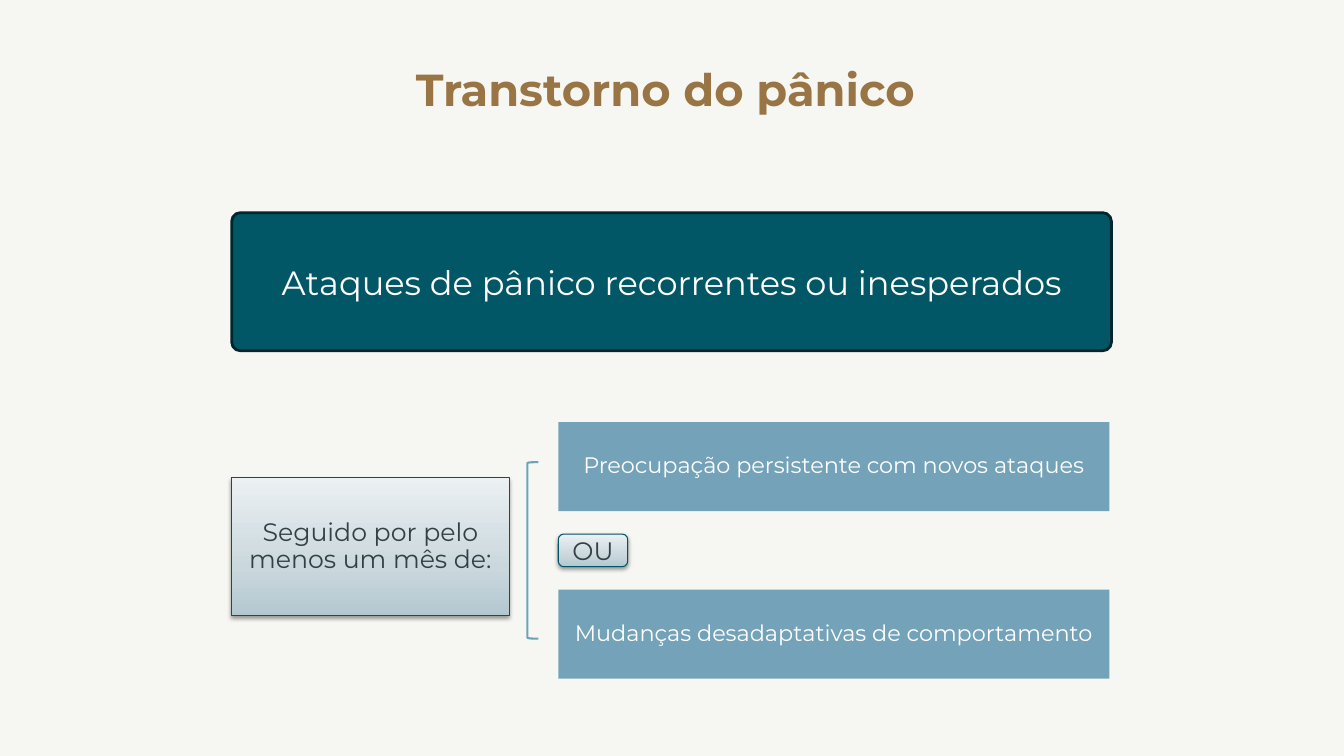
from lxml import etree
from pptx import Presentation
from pptx import util as u
from pptx.dml.color import RGBColor
from pptx.enum import shapes, text
from pptx.oxml import ns

Cm, Pt = u.Cm, u.Pt
SHAPE = shapes.MSO_SHAPE
FONT = "Montserrat"
COLORS = {
    "background": "F6F7F2",
    "title": "997545",
    "banner": "025766",
    "banner_line": "01262D",
    "option": "4988A7",
    "bracket": "6AA4B9",
    "card_line": "005666",
    "card_text": "334147",
    "white": "FFFFFF",
    "shadow": "000000",
}
CARD_GRADIENT = [(0, "B3C7D0"), (35, "CAD8DD"), (100, "EBF0F3")]


def color(name):
    return RGBColor.from_string(COLORS[name])


def add_color(parent, value, alpha=None):
    element = etree.SubElement(parent, ns.qn("a:srgbClr"), val=value)
    if alpha is not None:
        etree.SubElement(element, ns.qn("a:alpha"), val=str(alpha * 1000))


def write(shape, words, size, color_name, inset=0.03, bold=False, spacing=0.9):
    frame = shape.text_frame
    frame.word_wrap = True
    frame.vertical_anchor = text.MSO_ANCHOR.MIDDLE
    frame.margin_left = frame.margin_right = Cm(inset)
    frame.margin_top = frame.margin_bottom = Cm(min(inset, 0.13))
    paragraph = frame.paragraphs[0]
    paragraph.alignment = text.PP_ALIGN.CENTER
    paragraph.line_spacing = spacing
    run = paragraph.add_run()
    run.text = words
    run.font.name = FONT
    run.font.size = Pt(size)
    run.font.bold = bold
    run.font.color.rgb = color(color_name)


def add_box(slide, kind, box, fill=None, line=None, width=0.75):
    shape = slide.shapes.add_shape(kind, *(Cm(value) for value in box))
    shape.shadow.inherit = False
    if fill:
        shape.fill.solid()
        shape.fill.fore_color.rgb = color(fill)
    else:
        shape.fill.background()
    if line:
        shape.line.color.rgb = color(line)
        shape.line.width = Pt(width)
    else:
        shape.line.fill.background()
    return shape


def add_card(slide, kind, box):
    """Outlined box with a vertical gradient and a soft shadow."""
    card = add_box(slide, kind, box, line="card_line")
    card.fill.gradient()
    card.fill.gradient_angle = 90
    properties = card._element.spPr
    stops = properties.find(ns.qn("a:gradFill")).find(ns.qn("a:gsLst"))
    for stop in list(stops):
        stops.remove(stop)
    for position, value in CARD_GRADIENT:
        stop = etree.SubElement(stops, ns.qn("a:gs"), pos=str(position * 1000))
        add_color(stop, value)
    shadow = etree.SubElement(
        properties.find(ns.qn("a:effectLst")), ns.qn("a:outerShdw"),
        blurRad=str(Pt(3.1)), dist=str(Pt(1.6)), dir="5400000", rotWithShape="0")
    add_color(shadow, COLORS["shadow"], 38)
    return card


def add_option(slide, box, words):
    """Translucent blue box."""
    option = add_box(slide, SHAPE.RECTANGLE, box, fill="option")
    fill = option._element.spPr.find(ns.qn("a:solidFill"))
    fill.remove(fill[0])
    add_color(fill, COLORS["option"], 75)
    write(option, words, 16, "white")


def add_title(slide, box):
    title = slide.shapes.add_textbox(*(Cm(value) for value in box))
    write(title, "Transtorno do pânico", 32, "title", inset=0, bold=True)


def add_banner(slide, box):
    banner = add_box(slide, SHAPE.ROUNDED_RECTANGLE, box, "banner", "banner_line", 2)
    banner.adjustments[0] = 0.063
    write(banner, "Ataques de pânico recorrentes ou inesperados", 24, "white",
          inset=0.25, spacing=1)


def add_criteria(slide, box):
    left, top, width, height = box
    middle = top + height / 2
    option_width, option_height = 13.89, 2.24
    option_left = left + width - option_width

    # Alternatives at the top and bottom of the box
    add_option(slide, (option_left, top, option_width, option_height),
               "Preocupação persistente com novos ataques")
    add_option(slide, (option_left, top + height - option_height,
                       option_width, option_height),
               "Mudanças desadaptativas de comportamento")

    # Duration condition
    condition = add_card(slide, SHAPE.RECTANGLE, (left, top + 1.4, 6.99, 3.48))
    write(condition, "Seguido por pelo menos um mês de:", 18, "card_text")

    # Bracket joining the alternatives
    bracket_height = 4.45
    add_box(slide, SHAPE.LEFT_BRACKET,
            (option_left - 0.78, middle - bracket_height / 2, 0.28, bracket_height),
            line="bracket", width=1.5)

    # "Or" label between the alternatives
    label_height = 0.82
    label = add_card(slide, SHAPE.ROUNDED_RECTANGLE,
                     (option_left, middle - label_height / 2, 1.75, label_height))
    write(label, "OU", 18, "card_text", inset=0.25, spacing=1)


def main():
    presentation = Presentation()
    presentation.slide_width = Cm(33.87)
    presentation.slide_height = Cm(19.05)
    slide = presentation.slides.add_slide(presentation.slide_layouts[6])
    slide.background.fill.solid()
    slide.background.fill.fore_color.rgb = color("background")

    add_title(slide, (3.51, 1.24, 26.52, 2.16))
    add_banner(slide, (5.84, 5.36, 22.17, 3.48))
    add_criteria(slide, (5.84, 10.64, 22.12, 6.46))
    presentation.save("out.pptx")


if __name__ == "__main__":
    main()
